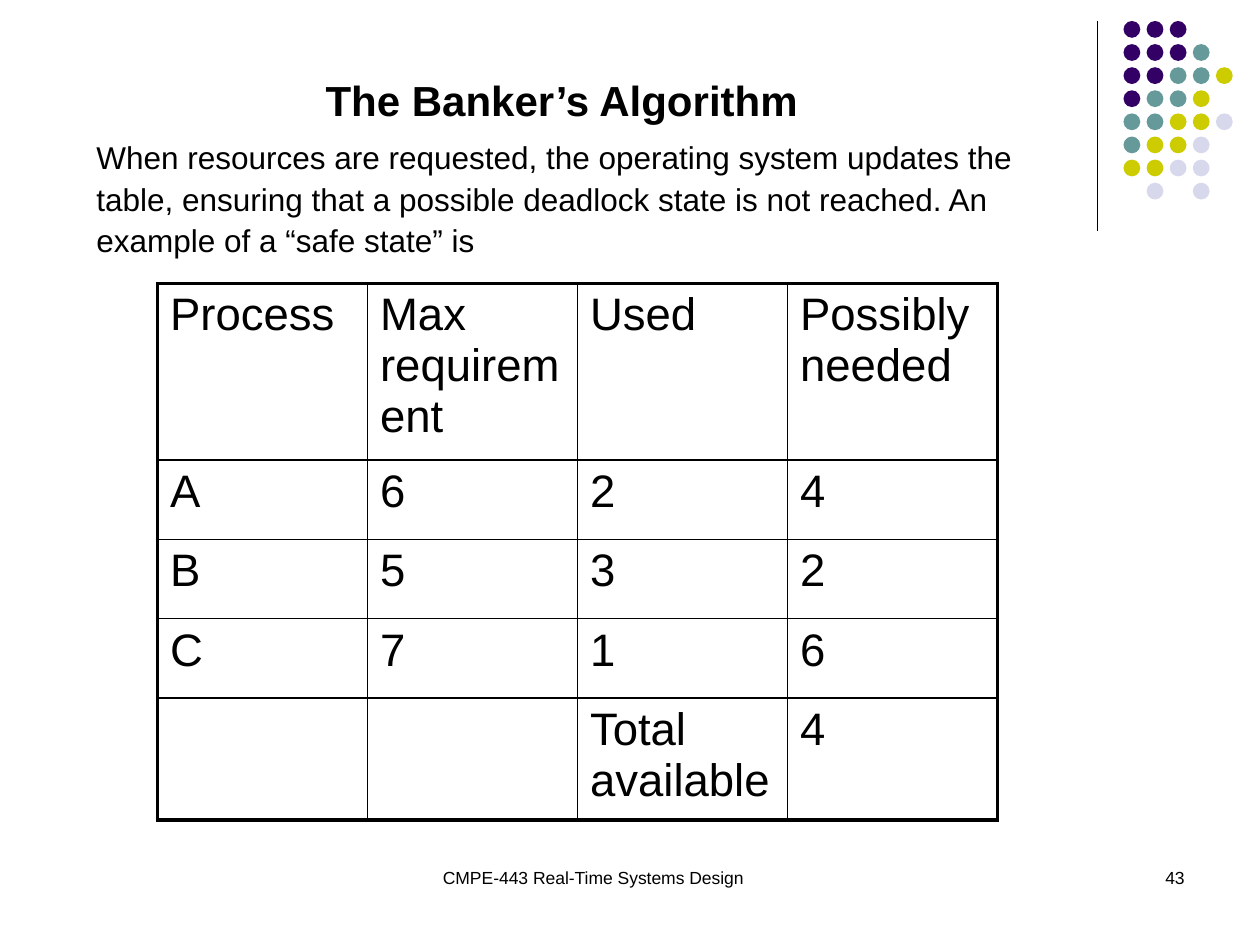
from pptx import Presentation
from pptx.dml.color import RGBColor
from pptx.enum.shapes import MSO_CONNECTOR, MSO_SHAPE
from pptx.enum.text import MSO_ANCHOR, MSO_AUTO_SIZE, PP_ALIGN
from pptx.oxml import parse_xml
from pptx.oxml.ns import nsdecls
from pptx.util import Pt

LEFT, CENTER, RIGHT = PP_ALIGN.LEFT, PP_ALIGN.CENTER, PP_ALIGN.RIGHT
TOP = MSO_ANCHOR.TOP
NO_FIT = MSO_AUTO_SIZE.NONE
ELLIPSE = MSO_SHAPE.OVAL
STRAIGHT = MSO_CONNECTOR.STRAIGHT
BLACK = "000000"
THIN, THICK = 1, 2.25
rgb = RGBColor.from_string

prs = Presentation()
prs.slide_width, prs.slide_height = Pt(720), Pt(540)
s = prs.slides.add_slide(prs.slide_layouts[5])


def grid(*cells):
    """Lengths on a grid of 120 columns by 90 rows of square cells."""
    return [int(prs.slide_width * c / 120) for c in cells]


def write(tf, text, size, align=LEFT, bold=False):
    tf.text = text
    tf.word_wrap = True
    p = tf.paragraphs[0]
    p.alignment = align
    for r in p.runs:
        r.font.name = "Arial"
        r.font.size = Pt(size)
        r.font.bold = bold
        r.font.color.rgb = rgb(BLACK)
    return p


# Corner ornament: a rule and a grid of dots
rule = s.shapes.add_connector(STRAIGHT, *grid(104.5, 2, 104.5, 22))
rule.line.color.rgb = rgb(BLACK)
rule.line.width = Pt(0.75)
rule._element.spPr.append(parse_xml(f"<a:effectLst {nsdecls('a')}/>"))

dot_colors = {"P": "330066", "T": "669999", "Y": "CCCC00", "L": "D8D8EC"}
dot_rows = ["PPP", "PPPT", "PPTTY", "PTTY", "TTYYL", "TYYL", "YYLL", " L L"]
for row, codes in enumerate(dot_rows):
    for col, code in enumerate(codes):
        if code in dot_colors:
            dot = s.shapes.add_shape(
                ELLIPSE, *grid(107 + 2.2 * col, 2 + 2.2 * row, 1.6, 1.6))
            dot.shadow.inherit = False
            dot.fill.solid()
            dot.fill.fore_color.rgb = rgb(dot_colors[code])
            dot.line.fill.background()

# Title and introduction
title = s.shapes.title
title.left, title.top, title.width, title.height = grid(8, 6, 91, 6.2)
tf = title.text_frame
tf.auto_size = NO_FIT
tf.vertical_anchor = TOP
write(tf, "The Banker’s Algorithm", 24, CENTER, True).line_spacing = 1.1

intro = s.shapes.add_textbox(*grid(8, 12.2, 91, 12.4))
write(intro.text_frame,
      "When resources are requested, the operating system updates the table, "
      "ensuring that a possible deadlock state is not reached. An example of "
      "a “safe state” is", 18).line_spacing = 1.1

# Resource table
rows = [
    ["Process", "Max requirement", "Used", "Possibly needed"],
    ["A", "6", "2", "4"],
    ["B", "5", "3", "2"],
    ["C", "7", "1", "6"],
    ["", "", "Total available", "4"],
]
row_heights = [16.8, 7.56, 7.56, 7.56, 11.6]
last_row, last_col = len(rows) - 1, len(rows[0]) - 1
table = s.shapes.add_table(
    len(rows), len(rows[0]), *grid(15, 27, 80, sum(row_heights))).table
table.first_row = table.horz_banding = False
for column in table.columns:
    column.width = grid(20)[0]
for i, texts in enumerate(rows):
    table.rows[i].height = grid(row_heights[i])[0]
    for j, text in enumerate(texts):
        cell = table.cell(i, j)
        write(cell.text_frame, text, 26)
        outer = {"L": j == 0, "R": j == last_col,
                 "T": i == 0, "B": i == last_row}
        tcPr = cell._tc.get_or_add_tcPr()
        for side, is_outer in outer.items():
            width = Pt(THICK if is_outer else THIN)
            tcPr.append(parse_xml(
                f'<a:ln{side} {nsdecls("a")} w="{width}"><a:solidFill>'
                f'<a:srgbClr val="{BLACK}"/></a:solidFill></a:ln{side}>'))
        cell.fill.background()

# Footer
footer = s.shapes.add_textbox(*grid(41, 82, 38, 6))
write(footer.text_frame, "CMPE-443 Real-Time Systems Design", 10)
number = s.shapes.add_textbox(*grid(86, 82, 28, 6))
write(number.text_frame, "43", 10, RIGHT)

prs.save("out.pptx")
